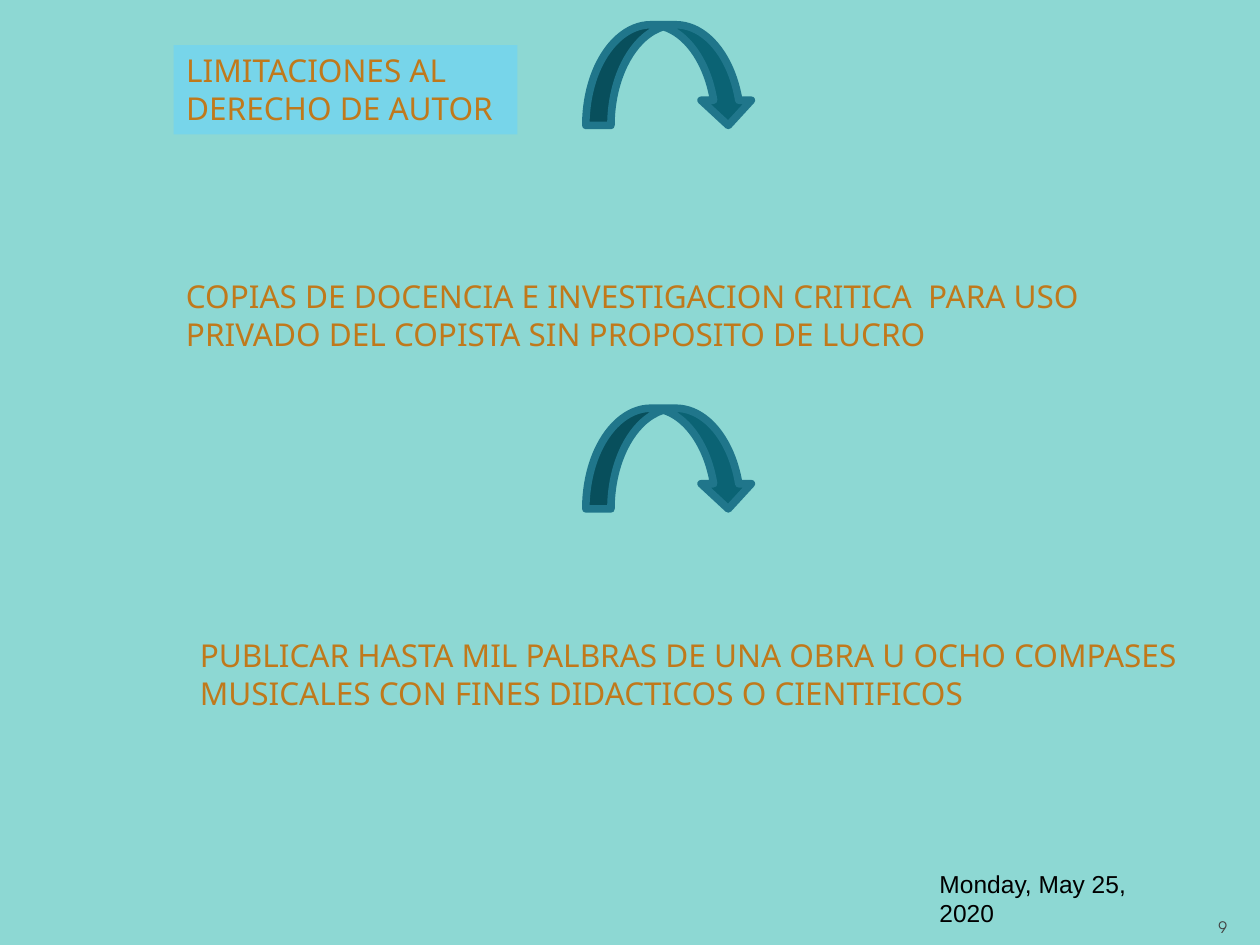
from dataclasses import dataclass

from pptx import Presentation
from pptx.dml.color import RGBColor
from pptx.enum.shapes import MSO_SHAPE
from pptx.enum.text import MSO_ANCHOR, MSO_AUTO_SIZE, PP_ALIGN
from pptx.util import Cm, Pt

CURVED_ARROW = MSO_SHAPE.CURVED_DOWN_ARROW
TOP, BOTTOM = MSO_ANCHOR.TOP, MSO_ANCHOR.BOTTOM
LEFT, RIGHT = PP_ALIGN.LEFT, PP_ALIGN.RIGHT
NO_AUTOFIT = MSO_AUTO_SIZE.NONE
TITLE_ONLY = 5


@dataclass(frozen=True)
class Style:
    font: str
    size: float
    color: RGBColor


@dataclass(frozen=True)
class Theme:
    background: RGBColor = RGBColor.from_string("8DD8D3")
    title_fill: RGBColor = RGBColor.from_string("77D5EA")
    arrow_fill: RGBColor = RGBColor.from_string("0B6374")
    arrow_line: RGBColor = RGBColor.from_string("20768B")
    arrow_width: float = 4.33
    text: Style = Style("Noto Sans", 18, RGBColor.from_string("C0791B"))
    date: Style = Style("Arial", 14, RGBColor.from_string("000000"))
    number: Style = Style("TeX Gyre Adventor", 9, RGBColor.from_string("424242"))


THEME = Theme()


def place(sp, box):
    sp.left, sp.top, sp.width, sp.height = (Cm(v) for v in box)


def write(sp, text, style, align=LEFT, anchor=TOP):
    tf = sp.text_frame
    tf.word_wrap = True
    tf.auto_size = NO_AUTOFIT
    tf.vertical_anchor = anchor
    tf.text = text
    for p in tf.paragraphs:
        p.alignment = align
        p.font.name = style.font
        p.font.size = Pt(style.size)
        p.font.color.rgb = style.color


def add_title(s, box, text):
    sp = s.shapes.title
    place(sp, box)
    sp.fill.solid()
    sp.fill.fore_color.rgb = THEME.title_fill
    write(sp, text, THEME.text)


def add_text(s, box, text, style, align=LEFT, anchor=TOP):
    sp = s.shapes.add_textbox(*(Cm(v) for v in box))
    write(sp, text, style, align, anchor)


def add_arrow(s, box):
    sp = s.shapes.add_shape(CURVED_ARROW, *(Cm(v) for v in box))
    sp.shadow.inherit = False
    for i, value in enumerate((0.25, 0.5, 0.25)):
        sp.adjustments[i] = value
    sp.fill.solid()
    sp.fill.fore_color.rgb = THEME.arrow_fill
    sp.line.color.rgb = THEME.arrow_line
    sp.line.width = Pt(THEME.arrow_width)


def add_footer(s, box):
    """Date on the left and slide number at the right edge of the box."""
    x, y, w, h = box
    add_text(s, (x, y + 0.25, 5.33, 1.02), "Monday, May 25, 2020",
             THEME.date, anchor=BOTTOM)
    add_text(s, (x + w - 1.52, y, 1.52, h), "9", THEME.number, RIGHT, BOTTOM)


def main():
    prs = Presentation()
    prs.slide_width, prs.slide_height = Cm(25.4), Cm(19.05)
    s = prs.slides.add_slide(prs.slide_layouts[TITLE_ONLY])
    s.background.fill.solid()
    s.background.fill.fore_color.rgb = THEME.background

    add_footer(s, (18.69, 17.55, 6.3, 1.45))
    add_title(s, (3.5, 0.91, 6.93, 1.8), "LIMITACIONES AL\nDERECHO DE AUTOR")
    add_text(s, (3.5, 5.46, 20, 1.8),
             "COPIAS DE DOCENCIA E INVESTIGACION CRITICA  PARA USO PRIVADO "
             "DEL COPISTA SIN PROPOSITO DE LUCRO", THEME.text)
    add_text(s, (3.78, 12.7, 21.41, 1.8),
             "PUBLICAR HASTA MIL PALBRAS DE UNA OBRA U OCHO COMPASES "
             "MUSICALES CON FINES DIDACTICOS O CIENTIFICOS", THEME.text)
    for y in (0.5, 8.23):
        add_arrow(s, (11.81, y, 3.38, 2.03))

    prs.save("out.pptx")


if __name__ == "__main__":
    main()
